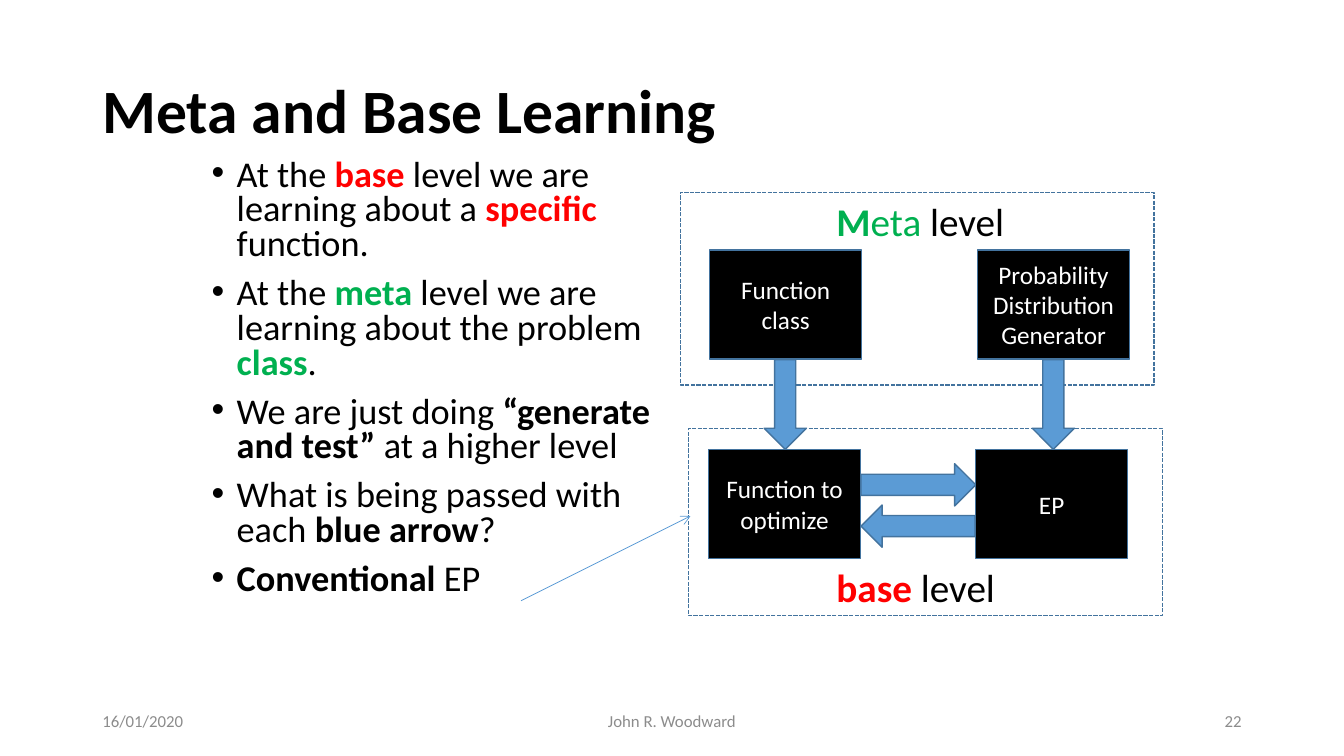
import pptx
import pptx.util
import pptx.dml.color
import pptx.enum.dml
import pptx.enum.shapes
import pptx.enum.text
import pptx.oxml
import pptx.oxml.ns

Pt = pptx.util.Pt
SHAPE = pptx.enum.shapes.MSO_SHAPE
ALIGN = pptx.enum.text.PP_ALIGN
ANCHOR = pptx.enum.text.MSO_ANCHOR
BLACK, WHITE, GREY = "000000", "FFFFFF", "8C8C8C"
RED, GREEN, BLUE, EDGE = "FF0000", "00B050", "5B9BD5", "43739E"


def rgb(value):
    return pptx.dml.color.RGBColor.from_string(value)


def add_xml(parent, tag, **attrs):
    el = pptx.oxml.parse_xml(f"<a:{tag} {pptx.oxml.ns.nsdecls('a')}/>")
    for name, value in attrs.items():
        el.set(name, value)
    parent.append(el)


class Deck:
    font = "Calibri"

    def __init__(self, prs):
        self.s = prs.slides.add_slide(prs.slide_layouts[5])

    def add_runs(self, p, runs, size, color=BLACK, align=ALIGN.LEFT):
        """Fill a paragraph; runs are plain strings or (text, colour, bold)."""
        p.alignment = align
        p.font.name, p.font.size = self.font, Pt(size)
        for run in runs:
            text, run_color, bold = (run, color, False) if isinstance(run, str) else run
            r = p.add_run()
            r.text = text
            r.font.bold = bold
            r.font.color.rgb = rgb(run_color)

    def title(self, text, x, y, w, h):
        sp = self.s.shapes.title
        sp.left, sp.top, sp.width, sp.height = Pt(x), Pt(y), Pt(w), Pt(h)
        tf = sp.text_frame
        tf.auto_size = pptx.enum.text.MSO_AUTO_SIZE.NONE
        tf.vertical_anchor = ANCHOR.MIDDLE
        tf.paragraphs[0].line_spacing = 0.9
        self.add_runs(tf.paragraphs[0], [(text, BLACK, True)], 44)

    def text(self, runs, x, y, w, h, size, color=BLACK, align=ALIGN.LEFT,
             anchor=ANCHOR.TOP, wrap=True):
        tf = self.s.shapes.add_textbox(Pt(x), Pt(y), Pt(w), Pt(h)).text_frame
        tf.word_wrap = wrap
        tf.vertical_anchor = anchor
        self.add_runs(tf.paragraphs[0], runs, size, color, align)

    def bullets(self, items, x, y, w, h, size):
        tf = self.s.shapes.add_textbox(Pt(x), Pt(y), Pt(w), Pt(h)).text_frame
        tf.word_wrap = True
        for i, runs in enumerate(items):
            p = tf.add_paragraph() if i else tf.paragraphs[0]
            p.line_spacing, p.space_before = 0.8, Pt(10)
            pPr = p._p.get_or_add_pPr()
            pPr.set("marL", str(Pt(18)))
            pPr.set("indent", str(-Pt(18)))
            add_xml(pPr, "buFont", typeface="Arial")
            add_xml(pPr, "buChar", char="•")
            self.add_runs(p, runs, size)

    def shape(self, kind, x, y, w, h, fill=None, lines=(), dashed=False):
        sp = self.s.shapes.add_shape(kind, Pt(x), Pt(y), Pt(w), Pt(h))
        sp.shadow.inherit = False
        if fill:
            sp.fill.solid()
            sp.fill.fore_color.rgb = rgb(fill)
        else:
            sp.fill.background()
        sp.line.color.rgb, sp.line.width = rgb(EDGE), Pt(1)
        if dashed:
            sp.line.dash_style = pptx.enum.dml.MSO_LINE.SQUARE_DOT
        tf = sp.text_frame
        tf.vertical_anchor = ANCHOR.MIDDLE
        for i, line in enumerate(lines):
            p = tf.add_paragraph() if i else tf.paragraphs[0]
            self.add_runs(p, [line], 18, WHITE, ALIGN.CENTER)

    def pointer(self, x1, y1, x2, y2):
        """Thin line with an open arrowhead at its end."""
        c = self.s.shapes.add_connector(pptx.enum.shapes.MSO_CONNECTOR.STRAIGHT,
                                        Pt(x1), Pt(y1), Pt(x2), Pt(y2))
        c.line.color.rgb, c.line.width = rgb(BLUE), Pt(0.5)
        spPr = c._element.spPr
        add_xml(spPr.find(pptx.oxml.ns.qn("a:ln")), "tailEnd", type="arrow")
        add_xml(spPr, "effectLst")


def main():
    prs = pptx.Presentation()
    prs.slide_width, prs.slide_height = Pt(960), Pt(540)
    deck = Deck(prs)

    deck.shape(SHAPE.RECTANGLE, 486, 137.5, 338.4, 137.5, dashed=True)
    deck.shape(SHAPE.RECTANGLE, 491.8, 306, 338.4, 133.9, dashed=True)
    deck.title("Meta and Base Learning", 66, 28.75, 828, 104.4)
    deck.bullets([
        ["At the ", ("base ", RED, True), "level we are learning about a ",
         ("specific ", RED, True), "function."],
        ["At the ", ("meta ", GREEN, True), "level we are learning about the problem ",
         ("class", GREEN, True), "."],
        ["We are just doing ", ("“generate and test” ", BLACK, True), "at a higher level"],
        ["What is being passed with each ", ("blue arrow", BLACK, True), "?"],
        [("Conventional", BLACK, True), " EP"],
    ], 144, 110.2, 342, 355, 25.9)
    deck.pointer(372.2, 429.1, 493.2, 368.6)

    for kind, x, y, w, h in [
        (SHAPE.DOWN_ARROW, 545.8, 257, 30.2, 64),
        (SHAPE.DOWN_ARROW, 737.3, 257, 30.2, 64),
        (SHAPE.RIGHT_ARROW, 615, 331.2, 82, 30.2),
        (SHAPE.LEFT_ARROW, 615, 360.7, 81.5, 30.2),
    ]:
        deck.shape(kind, x, y, w, h, BLUE)

    for x, y, lines in [
        (507, 178.6, ["Function class"]),
        (698.4, 178.6, ["Probability", "Distribution", "Generator"]),
        (506.2, 321, ["Function to optimize"]),
        (697, 321, ["EP"]),
    ]:
        deck.shape(SHAPE.RECTANGLE, x, y, 108.4, 78, BLACK, lines)

    deck.text([("base ", RED, True), "level"], 590.4, 399, 129, 41, 28, wrap=False)
    deck.text([("M", GREEN, True), ("eta", GREEN, False), " level"],
              590.4, 137.5, 135.4, 41, 28, wrap=False)

    for text, x, w, align in [
        ("16/01/2020", 66, 216, ALIGN.LEFT),
        ("John R. Woodward", 318, 324, ALIGN.CENTER),
        ("22", 678, 216, ALIGN.RIGHT),
    ]:
        deck.text([text], x, 500.5, w, 28.75, 12, GREY, align, ANCHOR.MIDDLE)

    prs.save("out.pptx")


if __name__ == "__main__":
    main()
